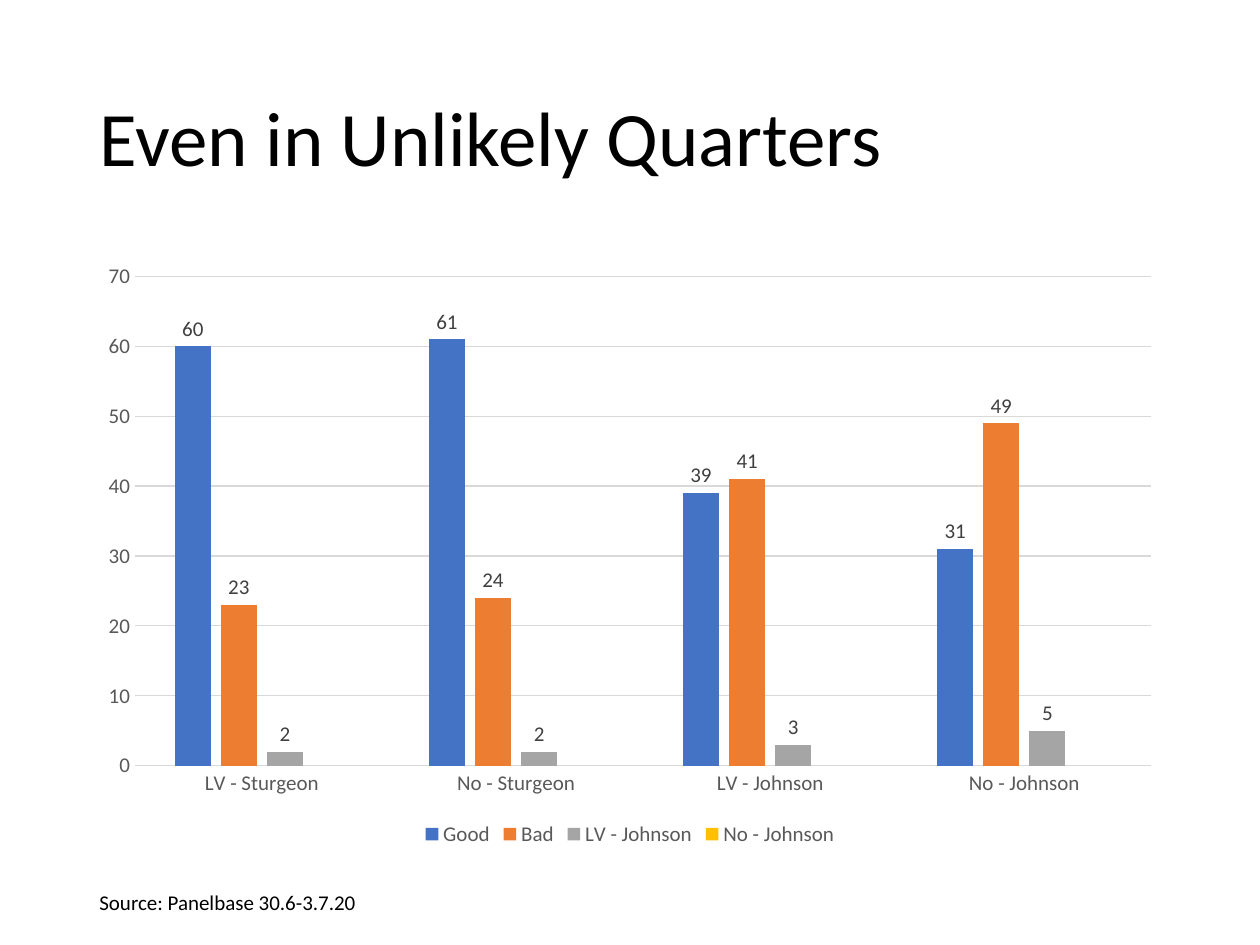
from dataclasses import dataclass

from pptx import Presentation
from pptx.chart.data import CategoryChartData
from pptx.dml.color import RGBColor
from pptx.enum.chart import (XL_CHART_TYPE, XL_LABEL_POSITION,
                             XL_LEGEND_POSITION, XL_TICK_MARK)
from pptx.enum.text import MSO_ANCHOR, MSO_AUTO_SIZE, PP_ALIGN
from pptx.util import Inches, Pt

COLUMNS = XL_CHART_TYPE.COLUMN_CLUSTERED
OUTSIDE = XL_LABEL_POSITION.OUTSIDE_END
BOTTOM = XL_LEGEND_POSITION.BOTTOM
NO_TICK = XL_TICK_MARK.NONE
MIDDLE = MSO_ANCHOR.MIDDLE
GROW = MSO_AUTO_SIZE.SHAPE_TO_FIT_TEXT
LEFT = PP_ALIGN.LEFT


@dataclass(frozen=True)
class Theme:
    face: str = "Calibri"
    ink: str = "000000"
    label: str = "404040"
    axis: str = "595959"
    rule: str = "D9D9D9"
    title: int = 44
    small: int = 12
    base: int = 10
    line: float = 0.75


@dataclass(frozen=True)
class Series:
    name: str
    color: str
    values: tuple


THEME = Theme()
EDGE, WIDTH = 0.69, 8.62
GROUPS = ("LV - Sturgeon", "No - Sturgeon", "LV - Johnson", "No - Johnson")
SERIES = (
    Series("Good", "4472C4", (60, 61, 39, 31)),
    Series("Bad", "ED7D31", (23, 24, 41, 49)),
    Series("LV - Johnson", "A5A5A5", (2, 2, 3, 5)),
    Series("No - Johnson", "FFC000", (None,) * len(GROUPS)),
)


def style(font, size: int, color: str) -> None:
    font.name = THEME.face
    font.size = Pt(size)
    font.color.rgb = RGBColor.from_string(color)


def rule(line) -> None:
    """Give a chart line the thin grey look."""
    line.color.rgb = RGBColor.from_string(THEME.rule)
    line.width = Pt(THEME.line)


def set_title(slide, text: str) -> None:
    title = slide.shapes.title
    title.left, title.top = Inches(EDGE), Inches(0.4)
    title.width, title.height = Inches(WIDTH), Inches(1.45)
    frame = title.text_frame
    frame.text = text
    frame.vertical_anchor = MIDDLE
    par = frame.paragraphs[0]
    par.alignment = LEFT
    par.line_spacing = 0.9
    style(par.font, THEME.title, THEME.ink)


def style_axes(chart) -> None:
    for axis in (chart.category_axis, chart.value_axis):
        axis.major_tick_mark = axis.minor_tick_mark = NO_TICK
        style(axis.tick_labels.font, THEME.small, THEME.axis)
    rule(chart.category_axis.format.line)
    scale = chart.value_axis
    scale.minimum_scale, scale.maximum_scale, scale.major_unit = 0, 70, 10
    scale.format.line.fill.background()
    rule(scale.major_gridlines.format.line)


def add_columns(slide) -> None:
    data = CategoryChartData(number_format="General")
    data.categories = GROUPS
    for item in SERIES:
        data.add_series(item.name, item.values)
    chart = slide.shapes.add_chart(COLUMNS, Inches(EDGE), Inches(2),
                                   Inches(WIDTH), Inches(4.76), data).chart
    style(chart.font, THEME.base, THEME.ink)
    chart.has_title = False
    chart.has_legend = True
    chart.legend.position = BOTTOM
    chart.legend.include_in_layout = False
    style(chart.legend.font, THEME.small, THEME.axis)
    style_axes(chart)

    plot = chart.plots[0]
    plot.gap_width, plot.overlap = 219, -27
    plot.vary_by_categories = False
    for item, bars in zip(SERIES, plot.series):
        bars.format.fill.solid()
        bars.format.fill.fore_color.rgb = RGBColor.from_string(item.color)
        labels = bars.data_labels
        labels.show_value = True
        labels.position = OUTSIDE
        style(labels.font, THEME.small, THEME.label)


def add_source(slide, text: str) -> None:
    frame = slide.shapes.add_textbox(Inches(EDGE), Inches(7.01),
                                     Inches(8.17), Inches(0.3)).text_frame
    frame.word_wrap = True
    frame.auto_size = GROW
    frame.text = text
    style(frame.paragraphs[0].font, THEME.small, THEME.ink)


def main() -> None:
    deck = Presentation()
    deck.slide_width, deck.slide_height = Inches(10), Inches(7.5)
    slide = deck.slides.add_slide(deck.slide_layouts.get_by_name("Title Only"))
    set_title(slide, "Even in Unlikely Quarters")
    add_columns(slide)
    add_source(slide, "Source: Panelbase 30.6-3.7.20")
    deck.save("out.pptx")


if __name__ == "__main__":
    main()
